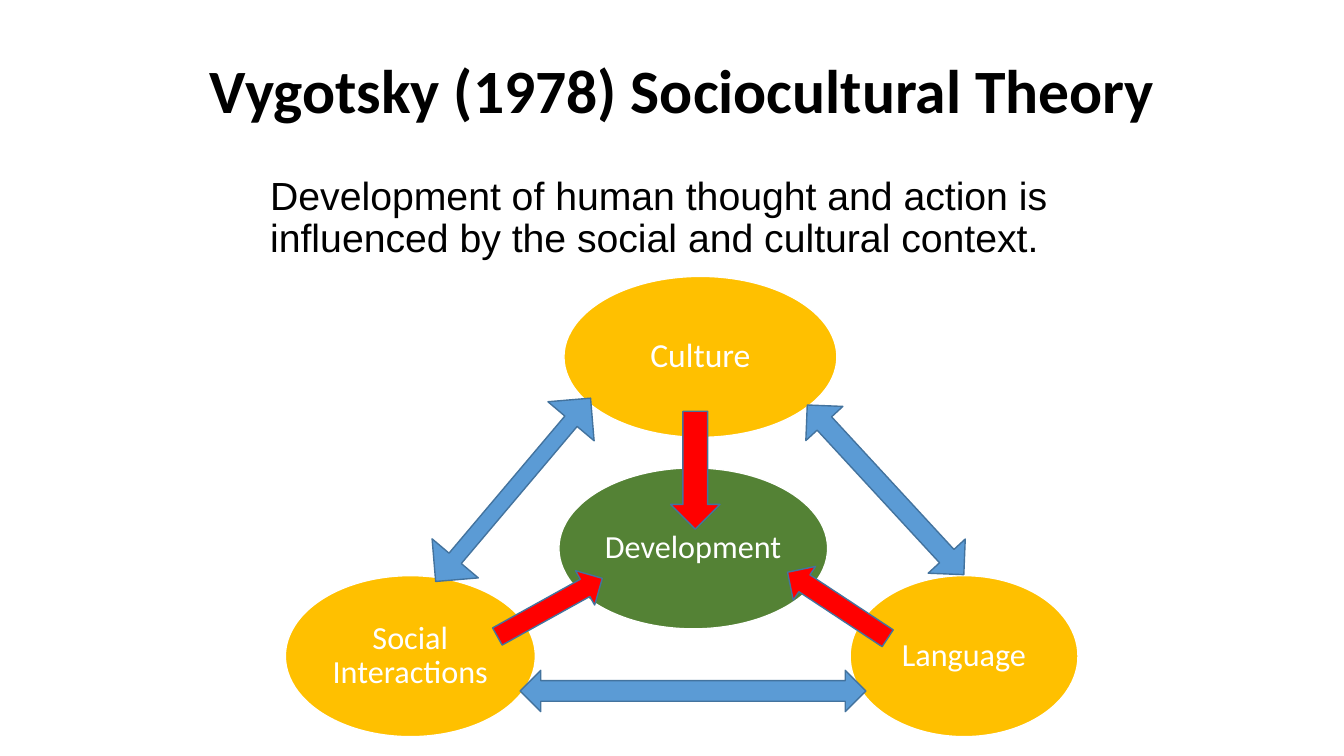
from dataclasses import dataclass

from lxml import etree
from pptx import Presentation
from pptx import util as u
from pptx.dml.color import RGBColor
from pptx.enum import shapes, text

Pt = u.Pt


@dataclass(frozen=True)
class Theme:
    black: str = "000000"
    white: str = "FFFFFF"
    gold: str = "FFC000"
    green: str = "548235"
    red: str = "FF0000"
    blue: str = "5B9BD5"
    outline: str = "43739E"
    heading_font: str = "Calibri"
    body_font: str = "Arial"
    title: int = 44
    body: int = 28
    node_large: int = 24
    node: int = 23


def write_text(tf, content, *, size, font, color, bold=False, align="LEFT",
               anchor="TOP", inset=0, before=0):
    tf.word_wrap = True
    tf.vertical_anchor = getattr(text.MSO_ANCHOR, anchor)
    tf.margin_left = tf.margin_right = Pt(inset)
    tf.margin_top = tf.margin_bottom = Pt(inset)
    p = tf.paragraphs[0]
    p.alignment = getattr(text.PP_ALIGN, align)
    p.line_spacing = 0.9
    p.space_before = Pt(before)
    r = p.add_run()
    r.text = content
    r.font.name = font
    r.font.size = Pt(size)
    r.font.bold = bold
    r.font.color.rgb = RGBColor.from_string(color)


class SlideBuilder:
    def __init__(self, s, theme):
        self.s = s
        self.theme = theme

    def text_box(self, box, content, **fmt):
        sp = self.s.shapes.add_textbox(*map(Pt, box))
        write_text(sp.text_frame, content, color=self.theme.black, **fmt)

    def shape(self, kind, box, fill, line):
        sp = self.s.shapes.add_shape(kind, *map(Pt, box))
        sp.shadow.inherit = False
        sp.fill.solid()
        sp.fill.fore_color.rgb = RGBColor.from_string(fill)
        sp.line.color.rgb = RGBColor.from_string(line)
        sp.line.width = Pt(1)
        return sp

    def node(self, box, label, fill, size):
        t = self.theme
        sp = self.shape(shapes.MSO_SHAPE.OVAL, box, fill, t.white)
        write_text(sp.text_frame, label, size=size, font=t.heading_font,
                   color=t.white, align="CENTER", anchor="MIDDLE", inset=1.44)

    def arrow(self, kind, box, fill, rotation=0, shaft=0.5):
        sp = self.shape(kind, box, fill, self.theme.outline)
        sp.rotation = rotation
        sp.adjustments[0] = shaft


def main():
    prs = Presentation()
    prs.slide_width, prs.slide_height = Pt(960), Pt(540)
    t = Theme()
    b = SlideBuilder(prs.slides.add_slide(prs.slide_layouts[6]), t)

    # Title and statement
    b.text_box((149.8, 21.6, 691.2, 90), "Vygotsky (1978) Sociocultural Theory",
               size=t.title, font=t.heading_font, bold=True, anchor="MIDDLE")
    b.text_box((193, 126, 648, 73.4),
               "Development of human thought and action is influenced "
               "by the social and cultural context.",
               size=t.body, font=t.body_font, before=10)

    # Development and the three influences around it
    node_height = 115
    for x, y, width, label, fill, size in (
        (399.2, 334.2, 192, "Development", t.green, t.node),
        (402.8, 197.4, 195, "Culture", t.gold, t.node_large),
        (607.2, 411.2, 162.8, "Language", t.gold, t.node),
        (203.8, 411.2, 178.6, "Social Interactions", t.gold, t.node),
    ):
        b.node((x, y, width, node_height), label, fill, size)

    # Red arrows pointing to development
    for box, rotation in (
        ((378.7, 391, 28.1, 85.7), 241),
        ((583.9, 389.5, 28.8, 85.7), 123.4),
        ((479, 293.8, 35.3, 84.2), 0),
    ):
        b.arrow(shapes.MSO_SHAPE.DOWN_ARROW, box, t.red, rotation)

    # Blue two-way arrows between the influences
    for box, rotation, shaft in (
        ((280.8, 328.3, 171.4, 43.2), 310.2, 0.266),
        ((550.1, 331.9, 164.9, 36), 47.3, 0.389),
        ((371.5, 478.8, 247, 29.5), 0, 0.5),
    ):
        b.arrow(shapes.MSO_SHAPE.LEFT_RIGHT_ARROW, box, t.blue, rotation, shaft)

    prs.save("out.pptx")


if __name__ == "__main__":
    main()
